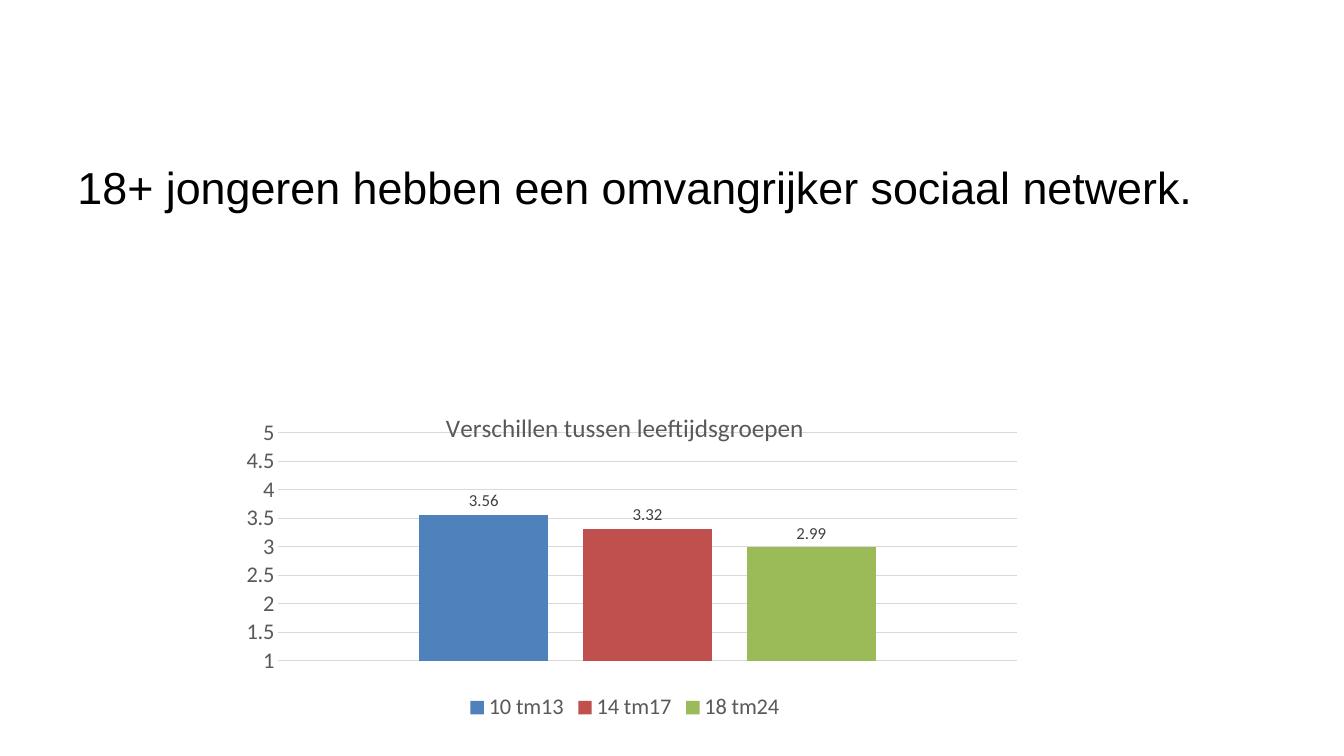
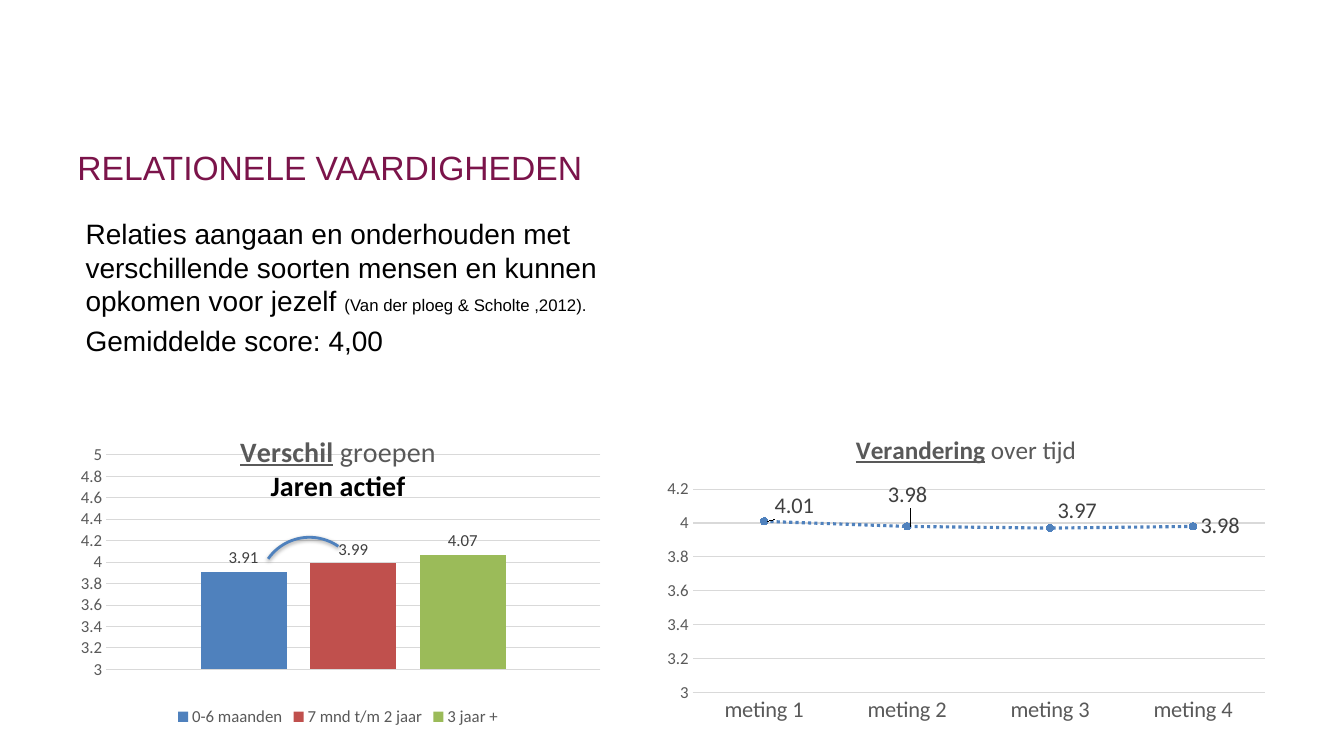
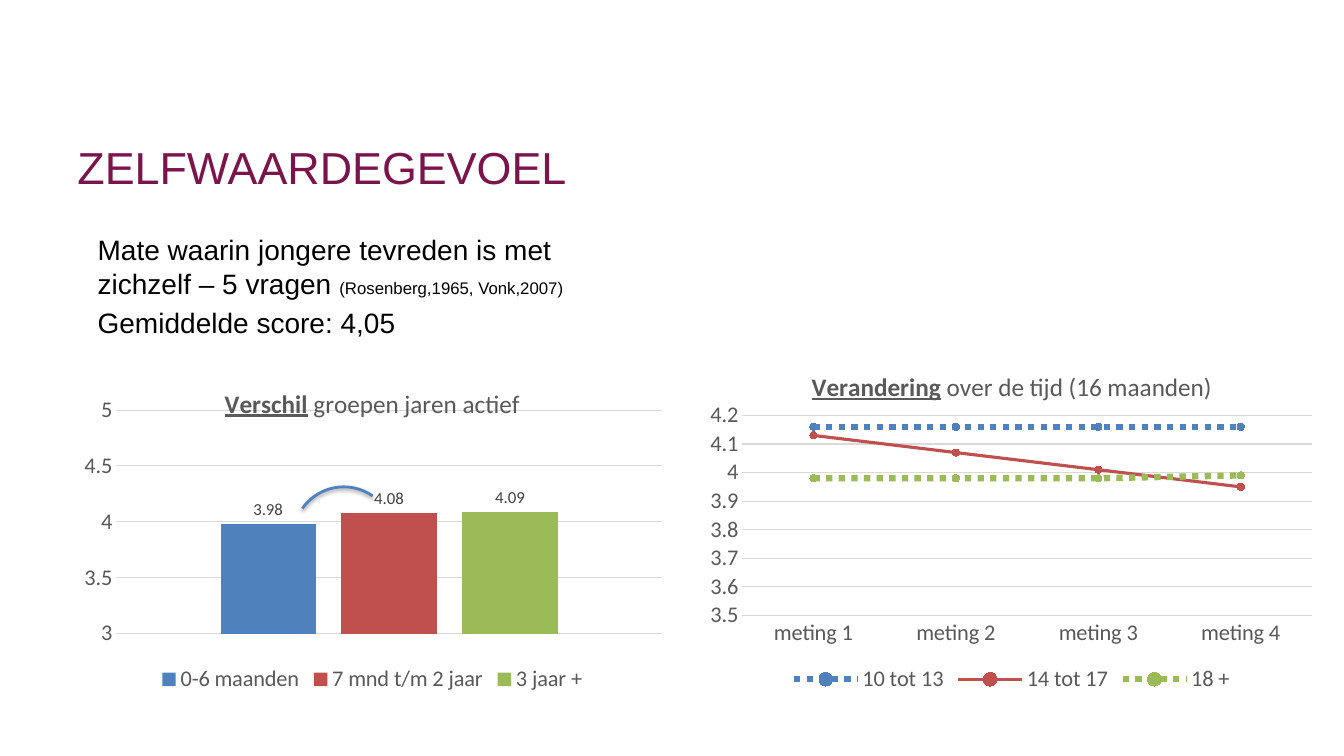
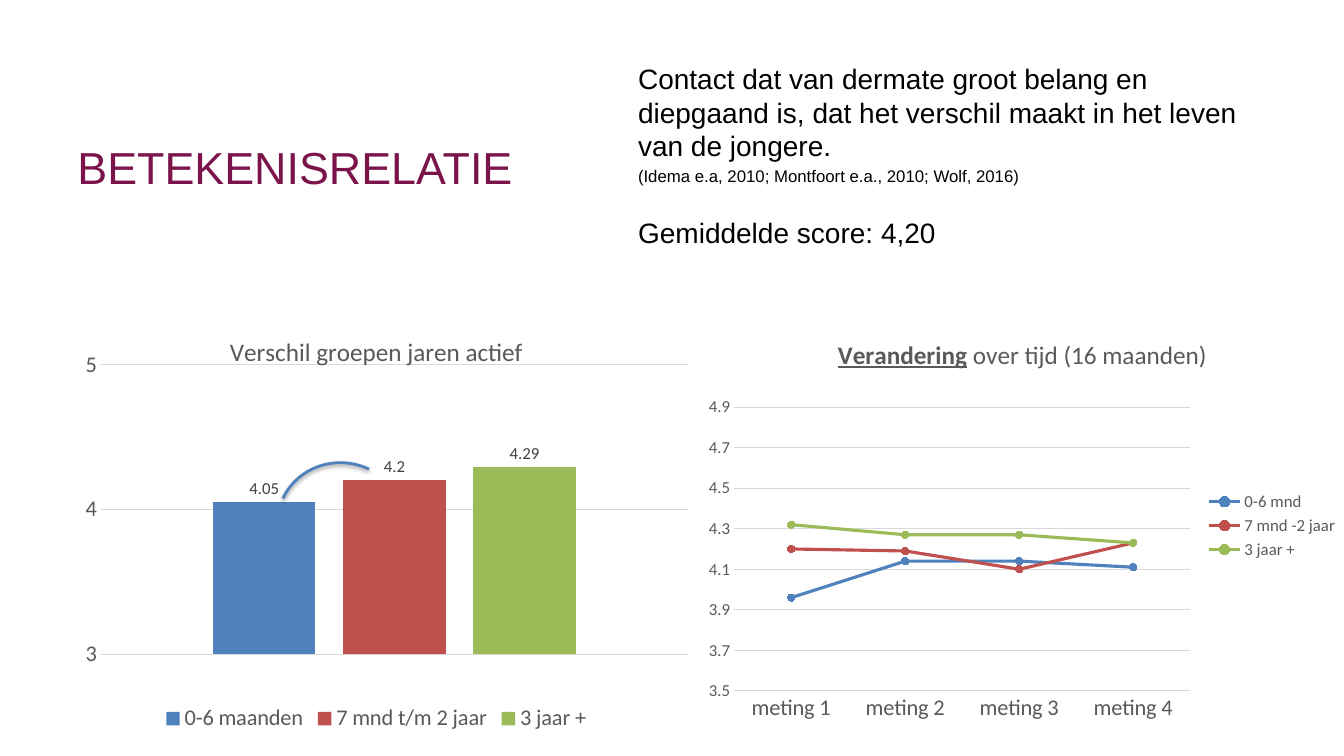
from dataclasses import dataclass

from pptx import Presentation
from pptx.chart.data import CategoryChartData
from pptx.dml.color import RGBColor
from pptx.enum.chart import (XL_CHART_TYPE, XL_LABEL_POSITION, XL_LEGEND_POSITION,
                             XL_MARKER_STYLE, XL_TICK_MARK)
from pptx.enum.dml import MSO_LINE
from pptx.enum.shapes import MSO_SHAPE
from pptx.enum.text import MSO_ANCHOR
from pptx.oxml import parse_xml
from pptx.oxml.ns import nsdecls, qn
from pptx.util import Emu, Pt

PX = 9144


@dataclass(frozen=True)
class Theme:
    """Colours, fonts and type sizes shared by all slides."""
    ink: str = "000000"
    plum: str = "7B144A"
    axis_text: str = "595959"
    value_text: str = "404040"
    grid: str = "D9D9D9"
    groups: tuple = ("4F81BD", "C0504D", "9BBB59")
    body_font: str = "Arial"
    chart_font: str = "Calibri"
    headline: int = 32
    small_headline: int = 24
    body: int = 20
    chart_title: int = 18
    label: int = 16
    small: int = 12
    chart_base: int = 10


THEME = Theme()
YEARS_ACTIVE = ("0-6 maanden", "7 mnd t/m 2 jaar", "3 jaar +")
MEASUREMENTS = ("meting 1", "meting 2", "meting 3", "meting 4")
HEADLINE_BOX = (67, 103, 1200, 125)
BAR_PLOT = (0.058, 0.117, 0.942, 0.687)
STRONG = {"bold": True, "underline": True}


def px(*lengths):
    """Turn px lengths into EMU."""
    return [Emu(length * PX) for length in lengths]


def assign(target, **values):
    """Set each given attribute on the target."""
    for attribute, value in values.items():
        setattr(target, attribute, value)


def style(font, size, color, name=THEME.chart_font, **values):
    """Give a font its size, colour, typeface and further values."""
    assign(font, size=Pt(size), name=name, **values)
    font.color.rgb = RGBColor.from_string(color)


def stroke(line, color, width, **values):
    """Give a line its colour, width and further values."""
    line.color.rgb = RGBColor.from_string(color)
    assign(line, width=Pt(width), **values)


def add_copy(slide, box, paragraphs, color=THEME.ink, anchor=MSO_ANCHOR.TOP):
    """Place paragraphs, each a space before and its (text, size) runs."""
    frame = slide.shapes.add_textbox(*px(*box)).text_frame
    assign(frame, word_wrap=True, vertical_anchor=anchor)
    for index, (space, runs) in enumerate(paragraphs):
        paragraph = frame.add_paragraph() if index else frame.paragraphs[0]
        paragraph.space_before = Pt(space)
        for text, size in runs:
            run = paragraph.add_run()
            run.text = text
            style(run.font, size, color, THEME.body_font)


def add_headline(slide, text, size=THEME.headline):
    """Place the plum headline of a topic slide."""
    add_copy(slide, HEADLINE_BOX, [(0, [(text, size)])], THEME.plum, MSO_ANCHOR.MIDDLE)


def add_arc(slide, box, rotation):
    """Draw the shaded arc that joins two columns."""
    arc = slide.shapes.add_shape(MSO_SHAPE.ARC, *px(*box))
    arc.rotation = rotation
    arc.fill.background()
    stroke(arc.line, THEME.groups[0], 2)
    arc.shadow.inherit = False
    arc.element.spPr.find(qn("a:effectLst")).append(parse_xml(
        f'<a:outerShdw {nsdecls("a")} blurRad="{Pt(3.1)}" dist="{Pt(1.6)}" dir="5400000" '
        f'rotWithShape="0"><a:srgbClr val="{THEME.ink}"><a:alpha val="38000"/></a:srgbClr>'
        '</a:outerShdw>'))


def layout_xml(x, y, width=None, height=None):
    """Build a manual layout from fractions of the chart."""
    parts = {"x": x, "y": y}
    modes = ""
    if width is not None:
        parts.update(w=width, h=height)
        modes = '<c:layoutTarget val="inner"/><c:xMode val="edge"/><c:yMode val="edge"/>'
    values = "".join(f'<c:{key} val="{value}"/>' for key, value in parts.items())
    return parse_xml(f'<c:layout {nsdecls("c")}><c:manualLayout>{modes}{values}'
                     '</c:manualLayout></c:layout>')


def set_chart_title(chart, title, size):
    """Write the chart title, given as lines of (text, values) runs."""
    chart.has_title = True
    frame = chart.chart_title.text_frame
    for index, line in enumerate(title):
        paragraph = frame.add_paragraph() if index else frame.paragraphs[0]
        for text, values in line:
            run = paragraph.add_run()
            run.text = text
            style(run.font, size, **{"color": THEME.axis_text, "bold": False, **values})


def add_chart(slide, box, kind, categories, groups, title, plot_box, scale,
              tick_size=THEME.label, title_size=THEME.chart_title,
              legend=XL_LEGEND_POSITION.BOTTOM, legend_size=THEME.label):
    """Place a chart with the shared title, legend, grid and axis style."""
    data = CategoryChartData()
    data.categories = categories
    for name, values in groups:
        data.add_series(name, values)
    chart = slide.shapes.add_chart(kind, *px(*box), data).chart
    style(chart.font, THEME.chart_base, THEME.ink)
    set_chart_title(chart, title, title_size)
    chart.has_legend = legend is not None
    if chart.has_legend:
        assign(chart.legend, position=legend, include_in_layout=False)
        style(chart.legend.font, legend_size, THEME.axis_text)

    low, high, step = scale
    scores = chart.value_axis
    assign(scores, minimum_scale=low, maximum_scale=high, major_unit=step,
           major_tick_mark=XL_TICK_MARK.NONE, has_major_gridlines=True)
    assign(scores.tick_labels, number_format="General", number_format_is_linked=False)
    style(scores.tick_labels.font, tick_size, THEME.axis_text)
    scores.format.line.fill.background()
    stroke(scores.major_gridlines.format.line, THEME.grid, 0.75)

    plot_area = chart.element.find(".//" + qn("c:plotArea"))
    for layout in plot_area.findall(qn("c:layout")):
        plot_area.remove(layout)
    plot_area.insert(0, layout_xml(*plot_box))
    chart.plots[0].vary_by_categories = False
    return chart


def add_group_columns(slide, box, names, scores, title, step=0.5, low=3, **options):
    """Place a column chart that compares groups."""
    chart = add_chart(slide, box, XL_CHART_TYPE.COLUMN_CLUSTERED, ["1"],
                      [(name, [score]) for name, score in zip(names, scores)],
                      title, BAR_PLOT, (low, 5, step), **options)
    chart.category_axis.visible = False
    assign(chart.plots[0], gap_width=219, overlap=-27)
    for group, color in zip(chart.series, THEME.groups):
        group.format.fill.solid()
        group.format.fill.fore_color.rgb = RGBColor.from_string(color)
        assign(group.data_labels, show_value=True, position=XL_LABEL_POSITION.OUTSIDE_END)
        style(group.data_labels.font, THEME.small, THEME.value_text)


def add_trend(slide, box, groups, title, plot_box, scale, strokes, **options):
    """Place a line chart over the four measurements."""
    chart = add_chart(slide, box, XL_CHART_TYPE.LINE_MARKERS, MEASUREMENTS, groups,
                      title, plot_box, scale, **options)
    moments = chart.category_axis
    moments.major_tick_mark = XL_TICK_MARK.NONE
    style(moments.tick_labels.font, THEME.label, THEME.axis_text)
    stroke(moments.format.line, THEME.grid, 0.75)
    for group, color, (width, dash) in zip(chart.series, THEME.groups, strokes):
        group.smooth = False
        stroke(group.format.line, color, width, dash_style=dash)
        assign(group.marker, style=XL_MARKER_STYLE.CIRCLE, size=5)
        group.marker.format.fill.solid()
        group.marker.format.fill.fore_color.rgb = RGBColor.from_string(color)
        stroke(group.marker.format.line, color, 0.75)
    return chart


def label_trend(chart, shifts):
    """Show the values of the first line and shift its leading labels."""
    group = chart.series[0]
    assign(group.data_labels, show_value=True, position=XL_LABEL_POSITION.RIGHT)
    style(group.data_labels.font, THEME.label, THEME.value_text)
    for index in range(len(shifts)):
        label = group.points[index].data_label
        style(label.font, THEME.label, THEME.value_text)
        label.position = XL_LABEL_POSITION.RIGHT
    for label, shift in zip(chart.element.iter(qn("c:dLbl")), shifts):
        label.insert(1, layout_xml(*shift))


def build_network(slide):
    """Build the slide on the size of the social network."""
    add_copy(slide, (67, 154, 1200, 516),
             [(0, [("18+ jongeren hebben een omvangrijker sociaal netwerk.", THEME.headline)])])
    add_group_columns(slide, (231, 391, 778, 329), ("10 tm13", "14 tm17", "18 tm24"),
                      (3.56, 3.32, 2.99), [[("Verschillen tussen leeftijdsgroepen", {})]], low=1)


def build_relational_skills(slide):
    """Build the slide on relational skills."""
    add_headline(slide, "RELATIONELE VAARDIGHEDEN", THEME.small_headline)
    add_group_columns(slide, (75, 415, 521, 310), YEARS_ACTIVE, (3.91, 3.99, 4.07),
                      [[("Verschil", STRONG), (" groepen", {})],
                       [("Jaren actief", {"bold": True, "color": THEME.ink})]],
                      step=0.2, tick_size=THEME.small, title_size=THEME.body,
                      legend_size=THEME.small)
    trend = add_trend(slide, (650, 415, 616, 310), [("Series 1", (4.01, 3.98, 3.97, 3.98))],
                      [[("Verandering", STRONG), (" over tijd", {})]],
                      (0.06, 0.227, 0.921, 0.65), (3, 4.2, 0.2),
                      [(2.25, MSO_LINE.ROUND_DOT)], tick_size=THEME.small, legend=None)
    label_trend(trend, [(0.005, -0.05), (-0.043, -0.1), (0, -0.054)])
    add_copy(slide, (75, 210, 591, 158), [
        (0, [("Relaties aangaan en onderhouden met verschillende soorten mensen en kunnen "
              "opkomen voor jezelf ", THEME.body),
             ("(Van der ploeg & Scholte ,2012).", THEME.small)]),
        (4, [("Gemiddelde score: 4,00", THEME.body)])])
    add_arc(slide, (257, 533, 100, 100), 304.9)


def build_self_worth(slide):
    """Build the slide on self-worth."""
    add_headline(slide, "ZELFWAARDEGEVOEL")
    dotted = (4.5, MSO_LINE.ROUND_DOT)
    add_trend(slide, (692, 352, 623, 340),
              [("10 tot 13", (4.16, 4.16, 4.16, 4.16)),
               ("14 tot 17", (4.13, 4.07, 4.01, 3.95)),
               ("18 +", (3.98, 3.98, 3.98, 3.99))],
              [[("Verandering", STRONG), (" over de tijd (16 maanden)", {})]],
              (0.071, 0.177, 0.907, 0.584), (3.5, 4.2, 0.1),
              [dotted, (2.25, MSO_LINE.SOLID), dotted])
    add_group_columns(slide, (82, 369, 575, 323), YEARS_ACTIVE, (3.98, 4.08, 4.09),
                      [[("Verschil", STRONG), (" groepen jaren actief", {})]])
    add_copy(slide, (87, 226, 536, 149), [
        (0, [("Mate waarin jongere tevreden is met zichzelf – 5 vragen ", THEME.body),
             ("(Rosenberg,1965, Vonk,2007)", THEME.small)]),
        (4, [("Gemiddelde score: 4,05", THEME.body)])])
    add_arc(slide, (291, 483, 100, 100), 304.9)


def build_meaningful_relation(slide):
    """Build the slide on the meaningful relation."""
    add_headline(slide, "BETEKENISRELATIE")
    add_group_columns(slide, (64, 313, 619, 418), YEARS_ACTIVE, (4.05, 4.2, 4.29),
                      [[("Verschil groepen jaren actief", {})]], step=1)
    add_arc(slide, (277, 457, 125, 130), 295.1)
    add_trend(slide, (690, 319, 648, 405),
              [("0-6 mnd", (3.96, 4.14, 4.14, 4.11)),
               ("7 mnd -2 jaar", (4.2, 4.19, 4.1, 4.23)),
               ("3 jaar +", (4.32, 4.27, 4.27, 4.23))],
              [[("Verandering", STRONG), (" over tijd (16 maanden)", {})]],
              (0.059, 0.16, 0.698, 0.745), (3.5, 5, 0.2),
              [(2.25, MSO_LINE.SOLID)] * 3, tick_size=THEME.small,
              legend=XL_LEGEND_POSITION.RIGHT, legend_size=THEME.small)
    add_copy(slide, (623, 56, 627, 149), [
        (0, [("Contact dat van dermate groot belang en diepgaand is, dat het verschil maakt "
              "in het leven van de jongere.", THEME.body)]),
        (2.4, [("(Idema e.a, 2010; Montfoort e.a., 2010; Wolf, 2016)", THEME.small)]),
        (21, [("Gemiddelde score: 4,20", THEME.body)])])


def main():
    """Build the four slides and save them."""
    deck = Presentation()
    deck.slide_width, deck.slide_height = px(1333, 750)
    for build in (build_network, build_relational_skills, build_self_worth,
                  build_meaningful_relation):
        build(deck.slides.add_slide(deck.slide_layouts[6]))
    deck.save("out.pptx")


if __name__ == "__main__":
    main()
